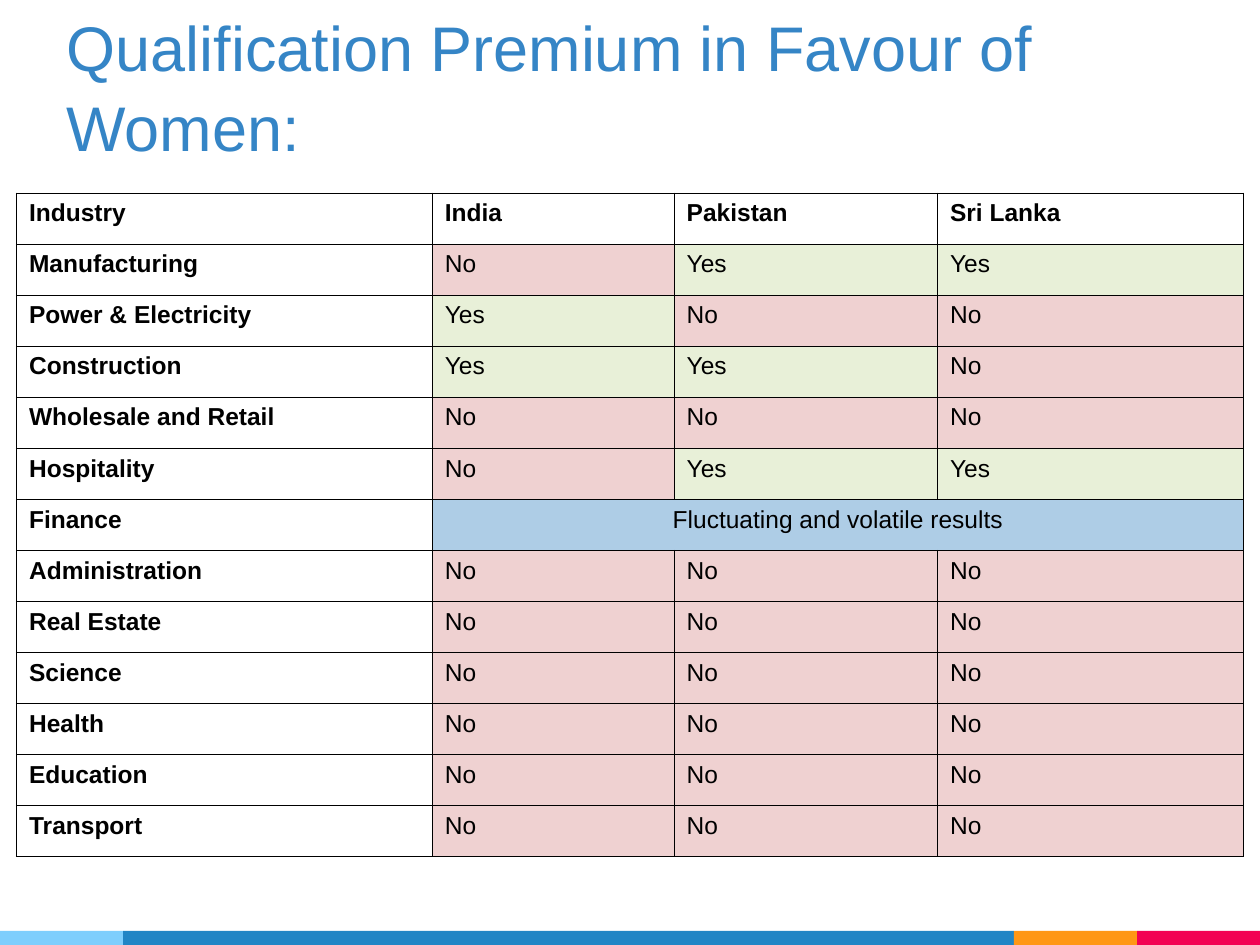
from typing import NamedTuple

from lxml.etree import SubElement
from pptx import Presentation
from pptx.dml.color import RGBColor
from pptx.enum.shapes import MSO_SHAPE as Shape
from pptx.enum.text import MSO_ANCHOR as Anchor, PP_ALIGN as Align
from pptx.oxml.ns import qn
from pptx.util import Pt

FONT = "Arial"
BLACK = "000000"
FILLS = {"Yes": "E8F0D8", "No": "EFD1D1"}
MIXED_FILL = "AECDE6"
COLUMN_WIDTHS = [237.6, 138.2, 150.5, 175]
ROW_HEIGHT = 29.19


class Band(NamedTuple):
    width: float
    color: str


class Industry(NamedTuple):
    name: str
    results: tuple[str, ...]


BANDS = [Band(70.4, "7ECEFD"), Band(509, "2185C5"),
         Band(70.4, "FF9715"), Band(70.2, "F20253")]
COUNTRIES = ["India", "Pakistan", "Sri Lanka"]
ALL_NO = ("No",) * 3
INDUSTRIES = [
    Industry("Manufacturing", ("No", "Yes", "Yes")),
    Industry("Power & Electricity", ("Yes", "No", "No")),
    Industry("Construction", ("Yes", "Yes", "No")),
    Industry("Wholesale and Retail", ALL_NO),
    Industry("Hospitality", ("No", "Yes", "Yes")),
    Industry("Finance", ("Fluctuating and volatile results",)),
    Industry("Administration", ALL_NO),
    Industry("Real Estate", ALL_NO),
    Industry("Science", ALL_NO),
    Industry("Health", ALL_NO),
    Industry("Education", ALL_NO),
    Industry("Transport", ALL_NO),
]


def rgb(value: str) -> RGBColor:
    return RGBColor.from_string(value)


def write(tf, text: str, *, size: float = 14, color: str = BLACK,
          bold: bool = False, align=Align.LEFT, spacing: float = 1) -> None:
    p = tf.paragraphs[0]
    p.alignment = align
    p.line_spacing = spacing
    r = p.add_run()
    r.text = text
    r.font.name = FONT
    r.font.size = Pt(size)
    r.font.bold = bold
    r.font.color.rgb = rgb(color)


def add_bands(s, bands: list[Band], top: float, height: float) -> None:
    left = 0
    for band in bands:
        sp = s.shapes.add_shape(Shape.RECTANGLE, Pt(left), Pt(top),
                                Pt(band.width), Pt(height))
        sp.shadow.inherit = False
        sp.fill.solid()
        sp.fill.fore_color.rgb = rgb(band.color)
        sp.line.fill.background()
        left += band.width


def add_title(s, text: str) -> None:
    tf = s.shapes.add_textbox(Pt(31), Pt(10.8), Pt(658.8), Pt(90)).text_frame
    tf.word_wrap = True
    tf.vertical_anchor = Anchor.BOTTOM
    tf.margin_left = tf.margin_right = Pt(7.2)
    tf.margin_top = tf.margin_bottom = Pt(7.2)
    write(tf, text, size=36, color="3585C6", spacing=1.05)


def set_borders(cell, color: str = BLACK, width: float = 0.75) -> None:
    """Outline a cell; lines must come before the fill in tcPr."""
    tc_pr = cell._tc.get_or_add_tcPr()
    for i, side in enumerate(("lnL", "lnR", "lnT", "lnB")):
        ln = SubElement(tc_pr, qn(f"a:{side}"), w=str(Pt(width)))
        fill = SubElement(ln, qn("a:solidFill"))
        SubElement(fill, qn("a:srgbClr"), val=color)
        tc_pr.insert(i, ln)


def fill_cell(cell, text: str, *, fill: str | None = None, **style) -> None:
    if fill:
        cell.fill.solid()
        cell.fill.fore_color.rgb = rgb(fill)
    write(cell.text_frame, text, **style)


def add_results_table(s, industries: list[Industry]) -> None:
    row_count = len(industries) + 1
    table = s.shapes.add_table(row_count, len(COLUMN_WIDTHS), Pt(9.4), Pt(110.4),
                               Pt(sum(COLUMN_WIDTHS)),
                               Pt(ROW_HEIGHT * row_count)).table
    table.first_row = table.horz_banding = False
    for column, width in zip(table.columns, COLUMN_WIDTHS):
        column.width = Pt(width)
    for row in table.rows:
        row.height = Pt(ROW_HEIGHT)
    for cell in table.iter_cells():
        cell.fill.background()
        set_borders(cell)

    for col, heading in enumerate(["Industry", *COUNTRIES]):
        fill_cell(table.cell(0, col), heading, bold=True)
    for row, industry in enumerate(industries, 1):
        fill_cell(table.cell(row, 0), industry.name, bold=True)
        if len(industry.results) == 1:
            first = table.cell(row, 1)
            first.merge(table.cell(row, len(COUNTRIES)))
            fill_cell(first, industry.results[0], fill=MIXED_FILL,
                      align=Align.CENTER)
            continue
        for col, result in enumerate(industry.results, 1):
            fill_cell(table.cell(row, col), result, fill=FILLS[result])


def main() -> None:
    prs = Presentation()
    prs.slide_width, prs.slide_height = Pt(720), Pt(540)
    s = prs.slides.add_slide(prs.slide_layouts[6])
    add_bands(s, BANDS, top=532, height=8)
    add_title(s, "Qualification Premium in Favour of Women:")
    add_results_table(s, INDUSTRIES)
    prs.save("out.pptx")


if __name__ == "__main__":
    main()
